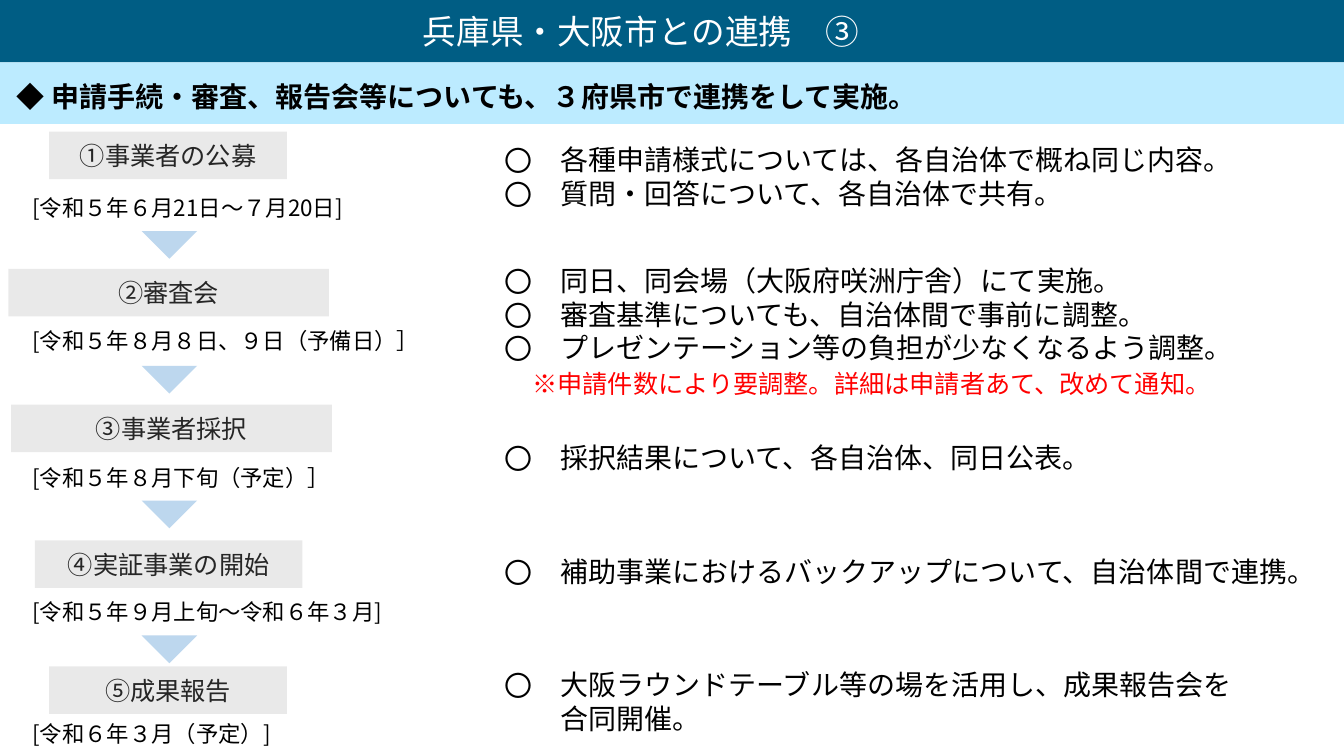
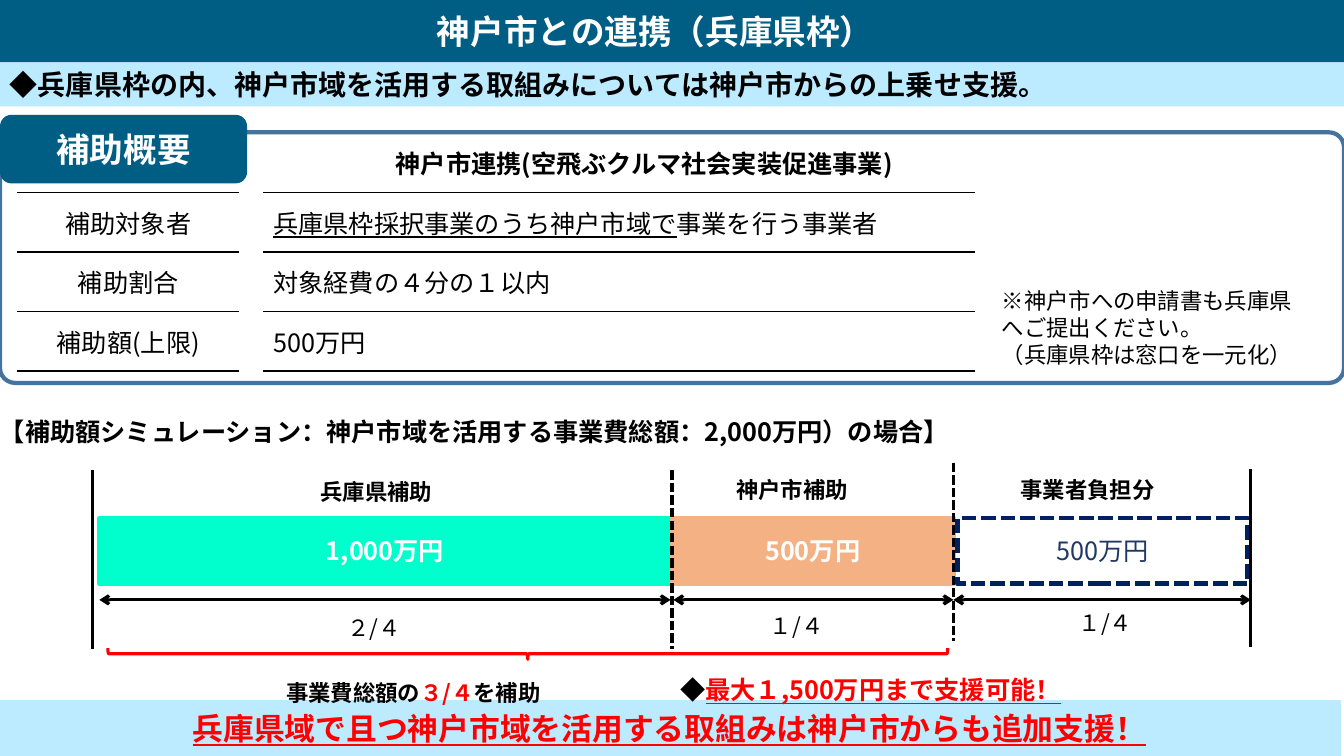
from dataclasses import dataclass

from lxml import etree
from pptx import Presentation
from pptx.dml.color import RGBColor
from pptx.enum.dml import MSO_LINE
from pptx.enum.shapes import MSO_CONNECTOR, MSO_SHAPE
from pptx.enum.text import MSO_ANCHOR, MSO_AUTO_SIZE, PP_ALIGN
from pptx.oxml.ns import qn
from pptx.util import Pt

LEFT, CENTER = PP_ALIGN.LEFT, PP_ALIGN.CENTER
TOP, MIDDLE = MSO_ANCHOR.TOP, MSO_ANCHOR.MIDDLE
RECTANGLE, ROUNDED = MSO_SHAPE.RECTANGLE, MSO_SHAPE.ROUNDED_RECTANGLE
TRIANGLE, BRACE = MSO_SHAPE.RIGHT_TRIANGLE, MSO_SHAPE.RIGHT_BRACE
STRAIGHT, DASH = MSO_CONNECTOR.STRAIGHT, MSO_LINE.SQUARE_DOT
NO_AUTOFIT = MSO_AUTO_SIZE.NONE
CONTENT_LAYOUT, TITLE_LAYOUT = 1, 5
PLAIN_TABLE_STYLE = "{2D5ABB26-0587-4C30-8999-92F81FD0307C}"


@dataclass(frozen=True)
class Theme:
    font: str = "Noto Sans CJK JP"
    leading: float = 1.2
    title_size: int = 24
    banner_size: int = 22
    lead_size: int = 20
    body_size: int = 18
    small_size: int = 16
    black: str = "000000"
    white: str = "FFFFFF"
    red: str = "FF0000"
    teal: str = "005D84"
    sky: str = "BCEBFF"
    step: str = "D9D9D9"
    step_text: str = "262626"
    arrow: str = "BDD7EE"
    frame: str = "43739E"
    mint: str = "00FFCC"
    orange: str = "F4B183"
    navy: str = "002060"
    navy_text: str = "203864"


THEME = Theme()
WIDTH, HEIGHT = 960, 540
TITLE_HEIGHT = 44.5


@dataclass(frozen=True)
class Span:
    text: str
    color: str = THEME.black
    underline: bool = False


def rgb(code):
    return RGBColor.from_string(code)


def write(para, content, size, color=THEME.black, bold=False, align=LEFT, fixed=False):
    """Fill a paragraph with a string or a list of spans."""
    if isinstance(content, str):
        para.text = content
    else:
        for span in content:
            run = para.add_run()
            run.text = span.text
            run.font.color.rgb = rgb(span.color)
            run.font.underline = span.underline
    para.alignment = align
    para.space_before = Pt(0)
    if fixed:
        para.line_spacing = Pt(size * THEME.leading)
    font = para.font
    font.size, font.bold, font.name = Pt(size), bold, THEME.font
    font.color.rgb = rgb(color)
    defaults = para._p.pPr.find(qn("a:defRPr"))
    etree.SubElement(defaults, qn("a:ea"), typeface=THEME.font)


def set_frame(shape, insets, anchor):
    frame = shape.text_frame
    frame.word_wrap, frame.auto_size = True, NO_AUTOFIT
    frame.vertical_anchor = anchor
    frame.margin_left, frame.margin_top, frame.margin_right, frame.margin_bottom = map(Pt, insets)
    return frame


def place(shape, left, top, width, height):
    shape.left, shape.top, shape.width, shape.height = map(Pt, (left, top, width, height))


def add_box(slide, bounds, fill=None, line=None, weight=0, kind=RECTANGLE):
    box = slide.shapes.add_shape(kind, *map(Pt, bounds))
    box.shadow.inherit = False
    if fill:
        box.fill.solid()
        box.fill.fore_color.rgb = rgb(fill)
    else:
        box.fill.background()
    if line:
        box.line.color.rgb = rgb(line)
        box.line.width = Pt(weight)
    else:
        box.line.fill.background()
    return box


def label(box, content, size, insets=(7.2, 3.6, 7.2, 3.6), **style):
    """Write one vertically centred paragraph into a shape."""
    write(set_frame(box, insets, MIDDLE).paragraphs[0], content, size, **style)


def add_text(slide, bounds, contents, size, inset=(7.2, 3.6), **style):
    box = slide.shapes.add_textbox(*map(Pt, bounds))
    frame = set_frame(box, inset * 2, TOP)
    for index, content in enumerate(contents):
        para = frame.add_paragraph() if index else frame.paragraphs[0]
        write(para, content, size, fixed=True, **style)


def add_line(slide, start, end, dashed=False, arrows=False):
    line = slide.shapes.add_connector(STRAIGHT, *map(Pt, start + end))
    line.line.color.rgb = rgb(THEME.black)
    line.line.width = Pt(2.25)
    if dashed:
        line.line.dash_style = DASH
    if arrows:
        stroke = line.line._get_or_add_ln()
        for tag in ("a:headEnd", "a:tailEnd"):
            etree.SubElement(stroke, qn(tag), type="arrow")
    etree.SubElement(line._element.spPr, qn("a:effectLst"))


def indent(para, left, bullet=None):
    """Indent a paragraph, hanging the bullet character if there is one."""
    properties = para._p.pPr
    properties.set("marL", str(Pt(left)))
    properties.set("indent", str(Pt(-left if bullet else 0)))
    defaults = properties.find(qn("a:defRPr"))
    if bullet:
        defaults.addprevious(etree.Element(qn("a:buFont"), typeface=THEME.font))
        defaults.addprevious(etree.Element(qn("a:buChar"), char=bullet))
    else:
        defaults.addprevious(etree.Element(qn("a:buNone")))


def add_page(deck, layout, title, lead, lead_height, lead_insets, bold, shift):
    """Start a slide with its title band and lead band."""
    page = deck.slides.add_slide(deck.slide_layouts[layout])
    heading = page.shapes.title
    place(heading, 0, 0, WIDTH, TITLE_HEIGHT)
    heading.fill.solid()
    heading.fill.fore_color.rgb = rgb(THEME.teal)
    label(heading, title, THEME.title_size, (0, 0, shift, 0),
          color=THEME.white, bold=bold, align=CENTER)
    band = add_box(page, (0, TITLE_HEIGHT, WIDTH, lead_height), THEME.sky)
    label(band, lead, THEME.lead_size, lead_insets, bold=True)
    return page


def add_step(page, name, box_left, box_width, top, date, date_top, date_width):
    box = add_box(page, (box_left, top, box_width, 34), THEME.step)
    color = box._element.spPr.find(qn("a:solidFill"))[0]
    etree.SubElement(color, qn("a:alpha"), val="56000")
    label(box, name, THEME.body_size, color=THEME.step_text, align=CENTER)
    add_text(page, (16, date_top, date_width, 27), [date], THEME.small_size)


def fill_list(body, items):
    """Write (space before, text) items; a text starting with ※ is a red remark."""
    place(body, 353, 98.5, 607, 436)
    frame = set_frame(body, (7.2, 3.6, 7.2, 3.6), TOP)
    for index, (gap, text) in enumerate(items):
        para = frame.add_paragraph() if index else frame.paragraphs[0]
        if text.startswith("※"):
            write(para, text, THEME.body_size, color=THEME.red, fixed=True)
            indent(para, 20)
        else:
            write(para, text, THEME.lead_size, fixed=True)
            indent(para, 40, "〇")
        para.space_before = Pt(gap)


def add_summary_table(page, rows):
    widths, row_height = (158.4, 17.3, 508.3), 42.5
    bounds = (12.4, 95, sum(widths), row_height * len(rows))
    table = page.shapes.add_table(len(rows), len(widths), *map(Pt, bounds)).table
    table.first_row = table.horz_banding = False
    table._tbl.tblPr.find(qn("a:tableStyleId")).text = PLAIN_TABLE_STYLE
    for column, width in zip(table.columns, widths):
        column.width = Pt(width)
    for index, texts in enumerate(rows):
        table.rows[index].height = Pt(row_height)
        header = index == 0
        for position, content in zip((0, 2), texts):
            cell = table.cell(index, position)
            cell.vertical_anchor = MIDDLE
            if header:
                cell.margin_left = Pt(43)
            if content:
                align = CENTER if header or position == 0 else LEFT
                write(cell.text_frame.paragraphs[0], content, THEME.body_size,
                      bold=header, align=align)
            underline_cell(cell)
    for cell in table.iter_cells():
        cell.fill.background()


def underline_cell(cell):
    border = etree.Element(qn("a:lnB"), w=str(Pt(1)))
    fill = etree.SubElement(border, qn("a:solidFill"))
    etree.SubElement(fill, qn("a:srgbClr"), val=THEME.black)
    cell._tc.get_or_add_tcPr().insert(0, border)


def add_simulation(page):
    bar_top, bar_height, arrow_top = 370, 47, 428.5
    segments = (
        ("兵庫県補助", 226, 338.5, "1,000万円", 71, 408, THEME.mint, "２/４", 248, 439),
        ("神戸市補助", 523, 337, "500万円", 480, 201, THEME.orange, "１/４", 550, 437),
        ("事業者負担分", 726, 337, "500万円", 684, 207, None, "１/４", 770.5, 435),
    )
    for name, name_left, name_top, amount, left, width, fill, share, share_left, share_top in segments:
        bar = add_box(page, (left, bar_top, width, bar_height), fill or THEME.white,
                      fill or THEME.navy, 3.5)
        if not fill:
            bar.line.dash_style = DASH
        label(bar, amount, THEME.body_size, color=THEME.white if fill else THEME.navy_text,
              bold=bool(fill), align=CENTER)
        add_text(page, (name_left, name_top, 130, 28), [name], THEME.small_size, (3, 3), bold=True)
        add_text(page, (share_left, share_top, 58, 20), [share], THEME.small_size, (0, 0))
    for x, top, dashed in ((66, 336, False), (480, 336, True), (681, 330.5, True), (893.5, 335, False)):
        add_line(page, (x, top), (x, top + 127.5), dashed=dashed)
    for start, end in ((71, 479), (481, 681), (681, 893.5)):
        add_line(page, (start, arrow_top), (end, arrow_top), arrows=True)
    brace = add_box(page, (373, 167, 8, 600), line=THEME.red, weight=2.25, kind=BRACE)
    brace.rotation = 90


def build_procedure(deck):
    page = add_page(deck, CONTENT_LAYOUT, "兵庫県・大阪市との連携　③",
                    "◆ 申請手続・審査、報告会等についても、３府県市で連携をして実施。",
                    44, (12, 5, 7.2, 0), bold=False, shift=44)
    steps = (
        ("①事業者の公募", 35, 170, 94, "[令和５年６月21日～７月20日]", 135, 240),
        ("②審査会", 6, 229, 192, "[令和５年８月８日、９日（予備日）］", 230, 296),
        ("③事業者採択", 8, 229, 289, "[令和５年８月下旬（予定）］", 328, 296),
        ("④実証事業の開始", 25, 191, 386, "[令和５年９月上旬～令和６年３月]", 424, 296),
        ("⑤成果報告", 35, 170, 476, "[令和６年３月（予定）]", 511, 296),
    )
    for step in steps:
        add_step(page, *step)
    for index in range(len(steps) - 1):
        arrow = add_box(page, (107, 151 + 96.3 * index, 28, 28), THEME.arrow, kind=TRIANGLE)
        arrow.rotation = 315
    fill_list(page.placeholders[1], (
        (0, "各種申請様式については、各自治体で概ね同じ内容。"),
        (0, "質問・回答について、各自治体で共有。"),
        (38, "同日、同会場（大阪府咲洲庁舎）にて実施。"),
        (0, "審査基準についても、自治体間で事前に調整。"),
        (0, "プレゼンテーション等の負担が少なくなるよう調整。"),
        (3, "※申請件数により要調整。詳細は申請者あて、改めて通知。"),
        (30, "採択結果について、各自治体、同日公表。"),
        (57, "補助事業におけるバックアップについて、自治体間で連携。"),
        (57, "大阪ラウンドテーブル等の場を活用し、成果報告会を\v合同開催。"),
    ))


def build_subsidy(deck):
    page = add_page(deck, TITLE_LAYOUT, "神戸市との連携（兵庫県枠）",
                    "◆兵庫県枠の内、神戸市域を活用する取組みについては神戸市からの上乗せ支援。",
                    31.5, (7.2, 0, 7.2, 0), bold=True, shift=24)
    banner = add_box(page, (-2, 500, WIDTH, 40), THEME.sky)
    slogan = "兵庫県域で且つ神戸市域を活用する取組みは神戸市からも追加支援！"
    label(banner, [Span(slogan, THEME.red, True)], THEME.banner_size, bold=True, align=CENTER)

    outline = add_box(page, (0, 94.5, WIDTH, 179), THEME.white, THEME.frame, 3, ROUNDED)
    outline.adjustments[0] = 0.06
    tab = add_box(page, (0, 82, 176.5, 49), THEME.teal, kind=ROUNDED)
    label(tab, "補助概要", THEME.title_size, color=THEME.white, bold=True, align=CENTER)
    add_summary_table(page, (
        ("", "神戸市連携(空飛ぶクルマ社会実装促進事業)"),
        ("補助対象者", [Span("兵庫県枠採択事業のうち神戸市域で", underline=True),
                   Span("事業を行う事業者")]),
        ("補助割合", "対象経費の４分の１以内"),
        ("補助額(上限)", "500万円"),
    ))
    add_text(page, (708.5, 201.5, 224, 65.5),
             ["※神戸市への申請書も兵庫県へご提出ください。", "（兵庫県枠は窓口を一元化）"],
             THEME.small_size)

    add_text(page, (-3, 294.5, 950, 28),
             ["【補助額シミュレーション：神戸市域を活用する事業費総額：2,000万円）の場合】"],
             THEME.body_size, (3, 3), bold=True)
    add_simulation(page)
    add_text(page, (204.5, 485, 235, 20),
             [[Span("事業費総額の"), Span("３/４", THEME.red), Span("を補助")]],
             THEME.small_size, (0, 0), bold=True)
    add_text(page, (486, 482, 320, 22),
             [[Span("◆"), Span("最大１,500万円まで支援可能！", THEME.red, True)]],
             THEME.body_size, (0, 0), bold=True)


def main():
    deck = Presentation()
    deck.slide_width, deck.slide_height = Pt(WIDTH), Pt(HEIGHT)
    build_procedure(deck)
    build_subsidy(deck)
    deck.save("out.pptx")


if __name__ == "__main__":
    main()
